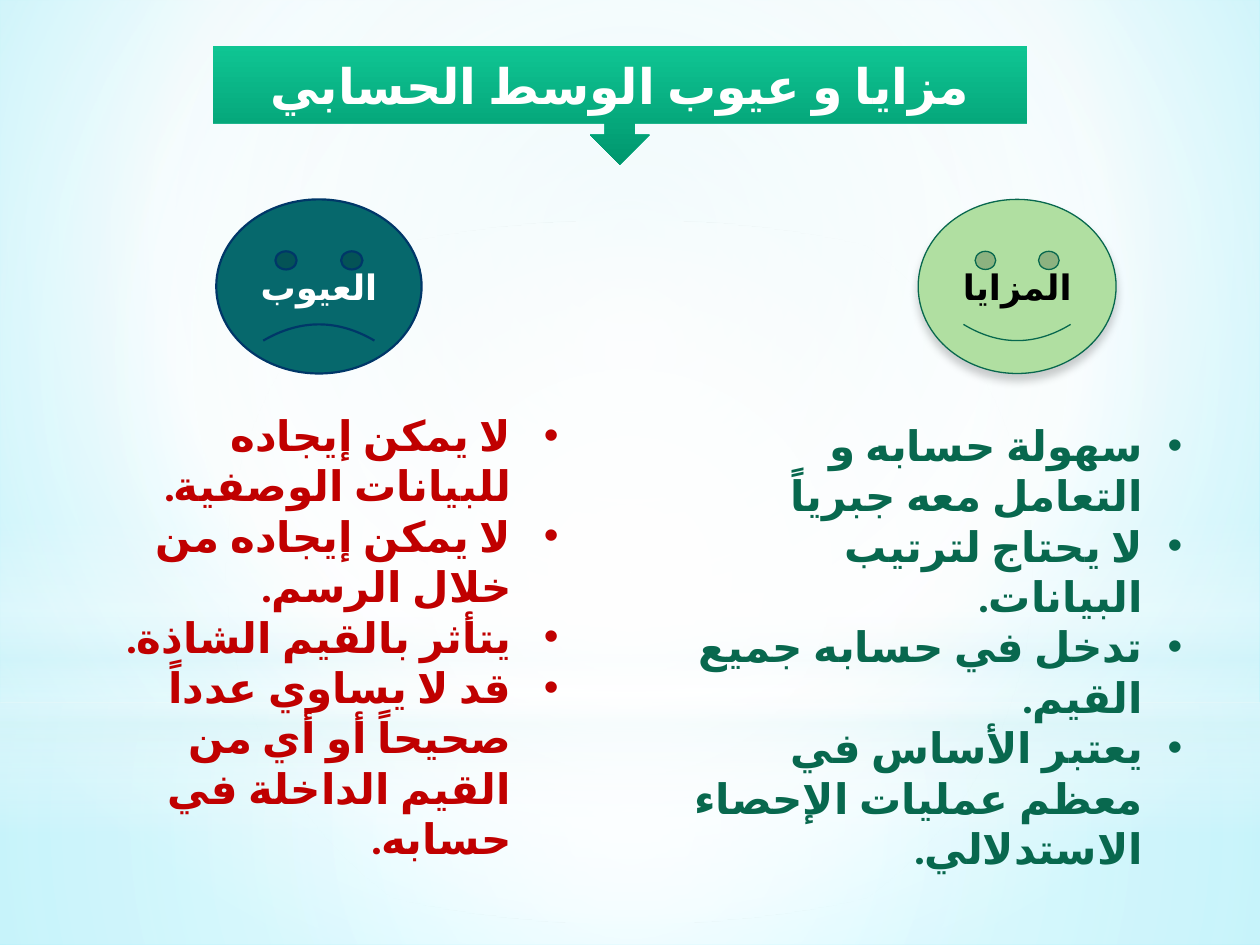
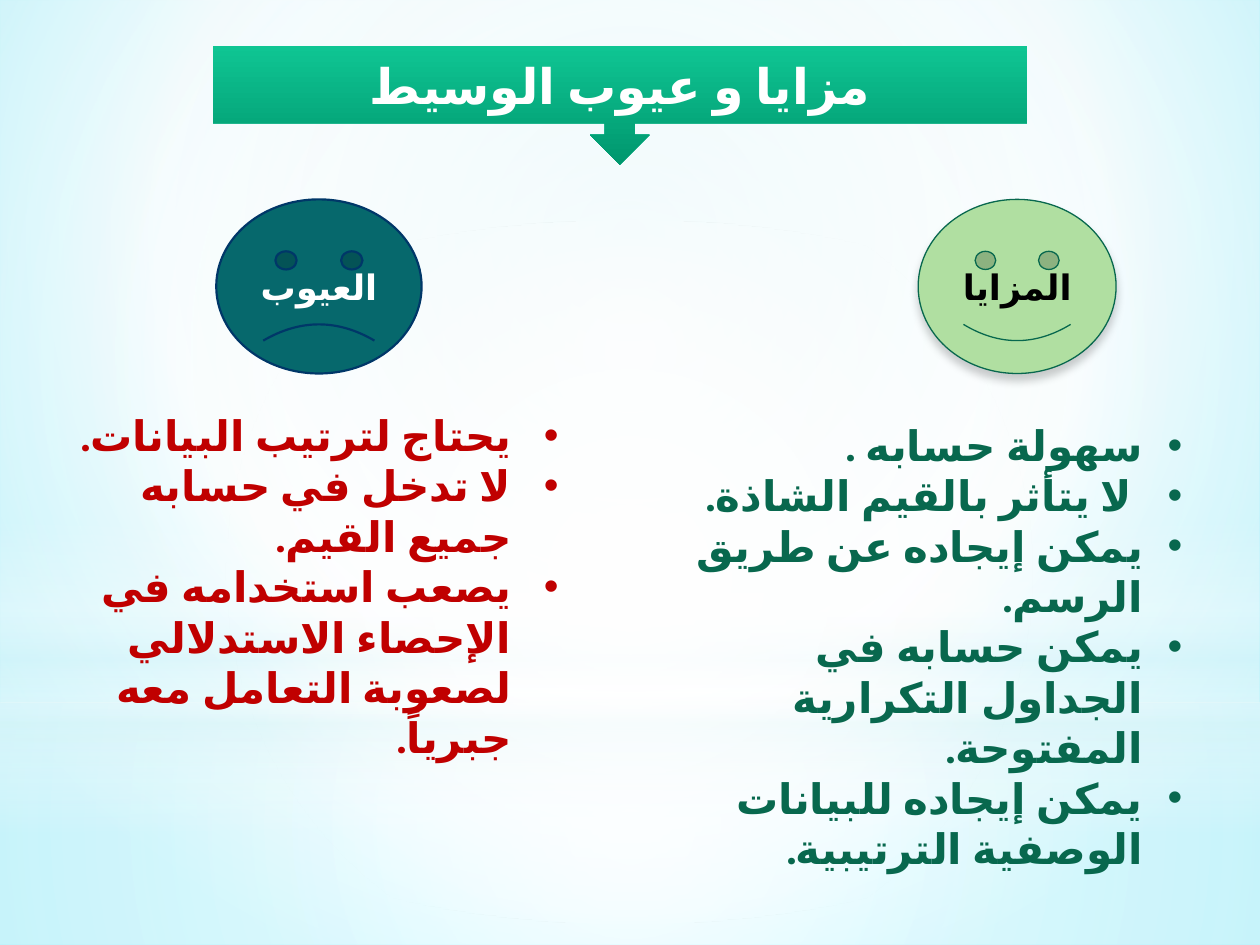
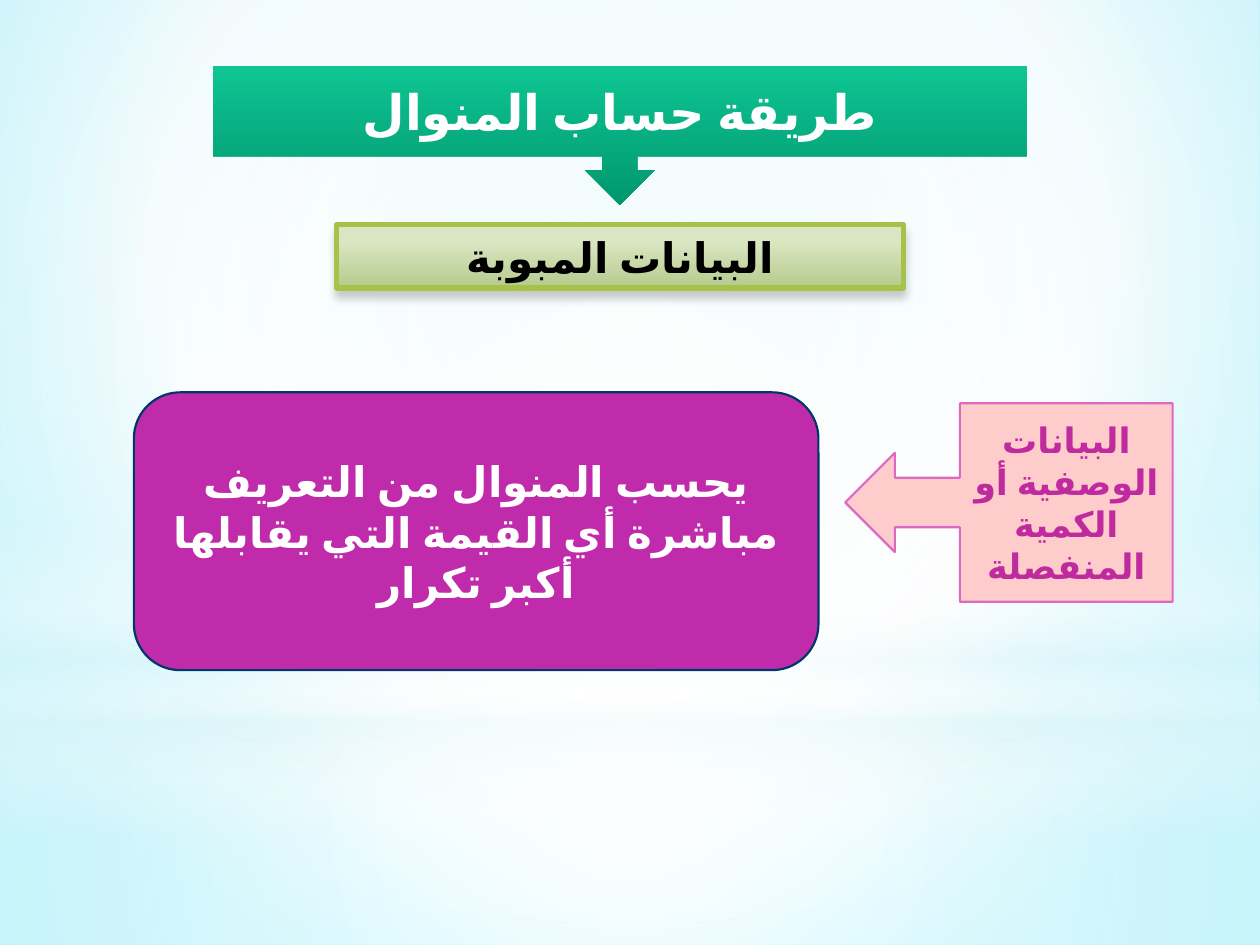
from lxml import etree
from pptx import Presentation, util as u
from pptx.dml.color import RGBColor
from pptx.enum import lang, shapes, text
from pptx.oxml import parse_xml
from pptx.oxml.ns import nsdecls, qn

SHAPE = shapes.MSO_SHAPE
ALIGN = text.PP_ALIGN
HEADING_FONT, BODY_FONT = "Roboto", "Karla"
WHITE, BLACK, NAVY, GREEN, RED = "FFFFFF", "000000", "003768", "08684E", "C00000"
ICE = "DBF5F9"
BANNER_FILL = [(0, "0FC593", 100), (100, "00976E", 100)]
BANNER_BODY = 0.65  # share of the banner's height above its arrow


def paint(fill, parent, colours, focus=None):
    """Fill with one hex colour, or with (position, hex, opacity) stops.

    The gradient runs downwards, or outwards from focus (l, t, r, b in percent).
    """
    fill.solid()
    if isinstance(colours, str):
        fill.fore_color.rgb = RGBColor.from_string(colours)
        return
    stops = "".join(
        f'<a:gs pos="{place * 1000}"><a:srgbClr val="{colour}">'
        f'<a:alpha val="{opacity * 1000}"/></a:srgbClr></a:gs>'
        for place, colour, opacity in colours)
    course = '<a:lin ang="5400000" scaled="0"/>'
    if focus:
        sides = " ".join(f'{side}="{share * 1000}"' for side, share in zip("ltrb", focus))
        course = f'<a:path path="circle"><a:fillToRect {sides}/></a:path>'
    parent.replace(parent.find(qn("a:solidFill")), parse_xml(
        f'<a:gradFill {nsdecls("a")} rotWithShape="1"><a:gsLst>{stops}</a:gsLst>'
        f'{course}</a:gradFill>'))


def write(shape, lines, size, colour, font=BODY_FONT, align=ALIGN.CENTER, indent=None):
    """Write bold right-to-left paragraphs, bulleted when an indent is given."""
    frame = shape.text_frame
    frame.word_wrap = True
    frame.text = "\n".join(lines)
    for paragraph in frame.paragraphs:
        paragraph.alignment = align
        paragraph.font.size = u.Pt(size)
        paragraph.font.bold = True
        paragraph.font.name = font
        paragraph.font.color.rgb = RGBColor.from_string(colour)
        paragraph.font.language_id = lang.MSO_LANGUAGE_ID.ARABIC
        for run in paragraph.runs:
            run.font.language_id = lang.MSO_LANGUAGE_ID.ARABIC
    for properties in shape.element.iter(qn("a:pPr")):
        properties.set("rtl", "1")
        etree.SubElement(properties.find(qn("a:defRPr")), qn("a:cs"), typeface=font)
        if indent:
            properties.set("marL", str(indent))
            properties.set("indent", str(-indent))
            properties.insert(0, parse_xml(f'<a:buFont {nsdecls("a")} typeface="Arial"/>'))
            properties.insert(1, parse_xml(f'<a:buChar {nsdecls("a")} char="•"/>'))


# Content: figures are preset, box in cm, fill, line, line width, shadow, text, size, colour
faces = [
    (SHAPE.SMILEY_FACE, (18.51, 4.02, 3.99, 3.51), "B0DFA1", GREEN, 0.75, True,
     "المزايا", 20, BLACK),
    (SHAPE.SMILEY_FACE, (4.36, 4.02, 4.14, 3.51), "06686C", NAVY, 1.25, False,
     "العيوب", 20, WHITE),
]
mode_steps = [
    (SHAPE.RECTANGLE, (6.79, 4.53, 11.42, 1.28),
     [(28, "D9E6C1", 100), (100, "B6CA8D", 100)], "A5C249", 3, True,
     "البيانات المبوبة", 24, BLACK),
    (SHAPE.LEFT_ARROW_CALLOUT, (17.04, 8.13, 6.6, 4), "FFCCCC", "DD69C4", 1.25, False,
     "البيانات الوصفية أو الكمية المنفصلة", 20, "BF2B9F"),
    (SHAPE.ROUNDED_RECTANGLE, (2.7, 7.91, 13.8, 5.6), "BF2BAA", NAVY, 1.25, False,
     "يحسب المنوال من التعريف مباشرة أي القيمة التي يقابلها أكبر تكرار", 24, WHITE),
]
# Each slide: title, banner top and height, figures, advantages, drawbacks
pages = [
    ("مزايا و عيوب الوسط الحسابي", 0.93, 2.39, faces,
     ["سهولة حسابه و التعامل معه جبرياً",
      "لا يحتاج لترتيب البيانات.",
      "تدخل في حسابه جميع القيم.",
      "يعتبر الأساس في معظم عمليات الإحصاء الاستدلالي."],
     ["لا يمكن إيجاده للبيانات الوصفية.",
      "لا يمكن إيجاده من خلال الرسم.",
      "يتأثر بالقيم الشاذة.",
      "قد لا يساوي عدداً صحيحاً أو أي من القيم الداخلة في حسابه."]),
    ("مزايا و عيوب الوسيط", 0.93, 2.39, faces,
     ["سهولة حسابه .",
      " لا يتأثر بالقيم الشاذة.",
      "يمكن إيجاده عن طريق الرسم.",
      "يمكن حسابه في الجداول التكرارية المفتوحة.",
      "يمكن إيجاده للبيانات الوصفية الترتيبية."],
     ["يحتاج لترتيب البيانات.",
      "لا تدخل في حسابه جميع القيم.",
      "يصعب استخدامه في الإحصاء الاستدلالي لصعوبة التعامل معه جبرياً."]),
    ("طريقة حساب المنوال", 1.33, 2.8, mode_steps, [], []),
]

deck = Presentation()
deck.slide_width, deck.slide_height = u.Cm(25.4), u.Cm(19.05)
master = deck.slide_master
title_only = deck.slide_layouts[5]
slides = [deck.slides.add_slide(title_only) for page in pages]

# Shared backdrop: a gradient ground and four veils of light on the master
ground = master.background.fill
paint(ground, master.element.find(".//" + qn("p:bgPr")),
      [(0, "CAF0F6", 100), (60, WHITE, 100), (100, "79EDFF", 100)], (20, 10, 20, 60))
centre = (50, 50, 50, 50)
veils = [
    (SHAPE.RECTANGLE, 14.17, 4.88, [(0, WHITE, 91), (37, WHITE, 76), (100, ICE, 79)], centre),
    (SHAPE.RECTANGLE, 0, 14.17, [(0, WHITE, 89), (48, WHITE, 62), (100, ICE, 79)], centre),
    (SHAPE.RECTANGLE, 10.46, 6.35, [(0, WHITE, 0), (29, WHITE, 30), (45, ICE, 40),
                                    (55, WHITE, 26), (65, ICE, 60), (100, WHITE, 0)], None),
    (SHAPE.OVAL, 4.45, 14.17, [(0, WHITE, 100), (56, WHITE, 0)], centre),
]
for order, (preset, top, height, stops, focus) in enumerate(veils):
    veil = slides[0].shapes.add_shape(preset, 0, u.Cm(top), deck.slide_width, u.Cm(height))
    veil.shadow.inherit = False
    veil.line.fill.background()
    paint(veil.fill, veil.element.spPr, stops, focus)
    veil.element.nvSpPr.cNvPr.set("id", str(101 + order))
    master.shapes.element.insert(2 + order, veil.element)

for slide, (heading, top, height, figures, advantages, drawbacks) in zip(slides, pages):
    # Banner behind the title
    title = slide.shapes.title
    banner = slide.shapes.add_shape(
        SHAPE.DOWN_ARROW_CALLOUT, *map(u.Cm, (4.29, top, 16.41, height)))
    banner.shadow.inherit = False
    banner.line.fill.background()
    paint(banner.fill, banner.element.spPr, BANNER_FILL)
    title.element.addprevious(banner.element)
    title.left, title.top, title.width = banner.left, banner.top, banner.width
    title.height = u.Cm(height * BANNER_BODY)
    write(title, [heading], 28, WHITE, HEADING_FONT)
    title.text_frame.auto_size = text.MSO_AUTO_SIZE.NONE
    title.text_frame.vertical_anchor = text.MSO_ANCHOR.MIDDLE

    # Labelled figures
    for preset, box, fill, line, width, shadowed, label, size, colour in figures:
        figure = slide.shapes.add_shape(preset, *map(u.Cm, box))
        figure.shadow.inherit = False
        paint(figure.fill, figure.element.spPr, fill)
        figure.line.color.rgb = RGBColor.from_string(line)
        figure.line.width = u.Pt(width)
        if shadowed:
            figure.element.spPr.find(qn("a:effectLst")).append(parse_xml(
                f'<a:outerShdw {nsdecls("a")} blurRad="{u.Pt(5)}" dist="{u.Pt(4)}" '
                f'dir="5400000" rotWithShape="0"><a:srgbClr val="{BLACK}">'
                f'<a:alpha val="20000"/></a:srgbClr></a:outerShdw>'))
        write(figure, [label], size, colour)
        figure.text_frame.vertical_anchor = text.MSO_ANCHOR.MIDDLE
        if label == "العيوب":
            figure.adjustments[0] = -0.047  # turns the smile into a frown

    # Bulleted columns under the faces
    for points, box, colour, indent in (
            (advantages, (13.69, 8.33, 10.39, 8.46), GREEN, 0.79),
            (drawbacks, (1.3, 8.13, 10.21, 8.46), RED, 0.95)):
        if points:
            column = slide.shapes.add_textbox(*map(u.Cm, box))
            write(column, points, 24, colour, align=ALIGN.RIGHT, indent=u.Cm(indent))
            column.text_frame.auto_size = text.MSO_AUTO_SIZE.SHAPE_TO_FIT_TEXT

deck.save("out.pptx")
